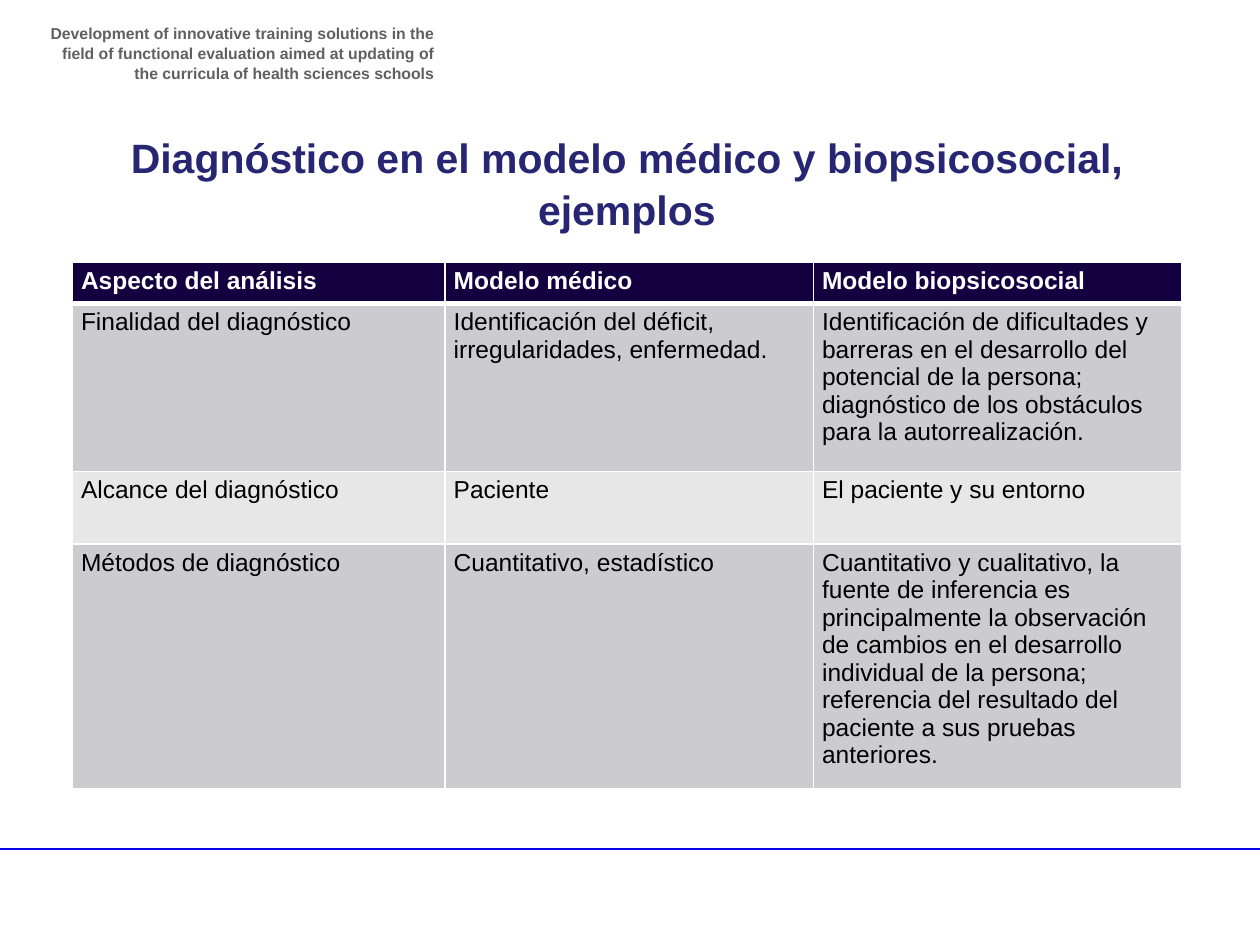
from dataclasses import dataclass

from lxml.etree import SubElement
from pptx import Presentation
from pptx.dml.color import RGBColor
from pptx.enum.shapes import MSO_CONNECTOR
from pptx.enum.text import MSO_ANCHOR, MSO_AUTO_SIZE, PP_ALIGN
from pptx.oxml.ns import qn
from pptx.util import Pt

FONT = "Arial"
WHITE = "FFFFFF"


@dataclass
class Style:
    size: float
    color: str
    bold: bool = False
    align: PP_ALIGN = PP_ALIGN.LEFT
    spacing: float = 1.0


@dataclass
class Row:
    height: float
    fill: str
    style: Style
    top: float
    base: float
    texts: tuple[str, str, str]


NOTE = Style(9, "606060", True, PP_ALIGN.RIGHT, 1.05)
TITLE = Style(23.4, "262673", True, PP_ALIGN.CENTER, 1.04)
HEAD = Style(14, WHITE, True)
BODY = Style(14, "000000")

WIDTHS = (213, 210.5, 210.5)
ROWS = (
    Row(23.5, "140041", HEAD, 1, 3,
        ("Aspecto del análisis", "Modelo médico", "Modelo biopsicosocial")),
    Row(96, "CCCBCF", BODY, 3, 1,
        ("Finalidad del diagnóstico",
         "Identificación del déficit, irregularidades, enfermedad.",
         "Identificación de dificultades y barreras en el desarrollo del "
         "potencial de la persona; diagnóstico de los obstáculos para la "
         "autorrealización.")),
    Row(41.5, "E7E7E8", BODY, 1, 1,
        ("Alcance del diagnóstico", "Paciente", "El paciente y su entorno")),
    Row(131.5, "CCCBCF", BODY, 1, 1,
        ("Métodos de diagnóstico",
         "Cuantitativo, estadístico",
         "Cuantitativo y cualitativo, la fuente de inferencia es "
         "principalmente la observación de cambios en el desarrollo "
         "individual de la persona; referencia del resultado del paciente "
         "a sus pruebas anteriores.")),
)


def paint(color, value: str) -> None:
    color.rgb = RGBColor.from_string(value)


def write(frame, text: str, style: Style) -> None:
    frame.word_wrap = True
    para = frame.paragraphs[0]
    para.alignment = style.align
    para.line_spacing = style.spacing
    run = para.add_run()
    run.text = text
    run.font.name = FONT
    run.font.size = Pt(style.size)
    run.font.bold = style.bold
    paint(run.font.color, style.color)


def place(shape, left: float, top: float, width: float, height: float) -> None:
    shape.left, shape.top = Pt(left), Pt(top)
    shape.width, shape.height = Pt(width), Pt(height)


def edge(cell, sizes: dict[str, float]) -> None:
    """Draw white cell borders; they must precede the fill in the XML."""
    props = cell._tc.get_or_add_tcPr()
    for side, size in sizes.items():
        line = SubElement(props, qn(f"a:ln{side}"), w=str(Pt(size)))
        fill = SubElement(line, qn("a:solidFill"))
        SubElement(fill, qn("a:srgbClr"), val=WHITE)


def draw_row(cells, row: Row) -> None:
    for cell, text in zip(cells, row.texts):
        cell.margin_left = cell.margin_right = Pt(5)
        cell.margin_top = cell.margin_bottom = Pt(2.7)
        edge(cell, {"L": 1, "R": 1, "T": row.top, "B": row.base})
        cell.fill.solid()
        paint(cell.fill.fore_color, row.fill)
        write(cell.text_frame, text, row.style)


def draw_table(slide, left: float, top: float) -> None:
    high = sum(row.height for row in ROWS)
    table = slide.shapes.add_table(
        len(ROWS), len(WIDTHS), Pt(left), Pt(top),
        Pt(sum(WIDTHS)), Pt(high)).table
    for col, width in zip(table.columns, WIDTHS):
        col.width = Pt(width)
    for line, row in zip(table.rows, ROWS):
        line.height = Pt(row.height)
        draw_row(line.cells, row)


def draw_rule(slide, left: float, right: float, top: float) -> None:
    rule = slide.shapes.add_connector(
        MSO_CONNECTOR.STRAIGHT, Pt(left), Pt(top), Pt(right), Pt(top))
    paint(rule.line.color, "0404E6")
    rule.line.width = Pt(1)
    SubElement(rule._element.spPr, qn("a:effectLst"))


def main() -> None:
    deck = Presentation()
    deck.slide_width, deck.slide_height = Pt(720), Pt(540)
    slide = deck.slides.add_slide(deck.slide_layouts[5])

    draw_rule(slide, -3.6, 720, 485.3)
    note = slide.shapes.add_textbox(Pt(20), Pt(9.4), Pt(235), Pt(34))
    write(note.text_frame,
          "Development of innovative training solutions in the ﬁeld of "
          "functional evaluation aimed at updating of the curricula of "
          "health sciences schools", NOTE)

    title = slide.shapes.title
    place(title, 14.4, 71.3, 687.6, 78.5)
    title.text_frame.auto_size = MSO_AUTO_SIZE.NONE
    title.text_frame.vertical_anchor = MSO_ANCHOR.TOP
    write(title.text_frame,
          "Diagnóstico en el modelo médico y biopsicosocial, ejemplos", TITLE)

    draw_table(slide, 41.3, 150)
    deck.save("out.pptx")


if __name__ == "__main__":
    main()
